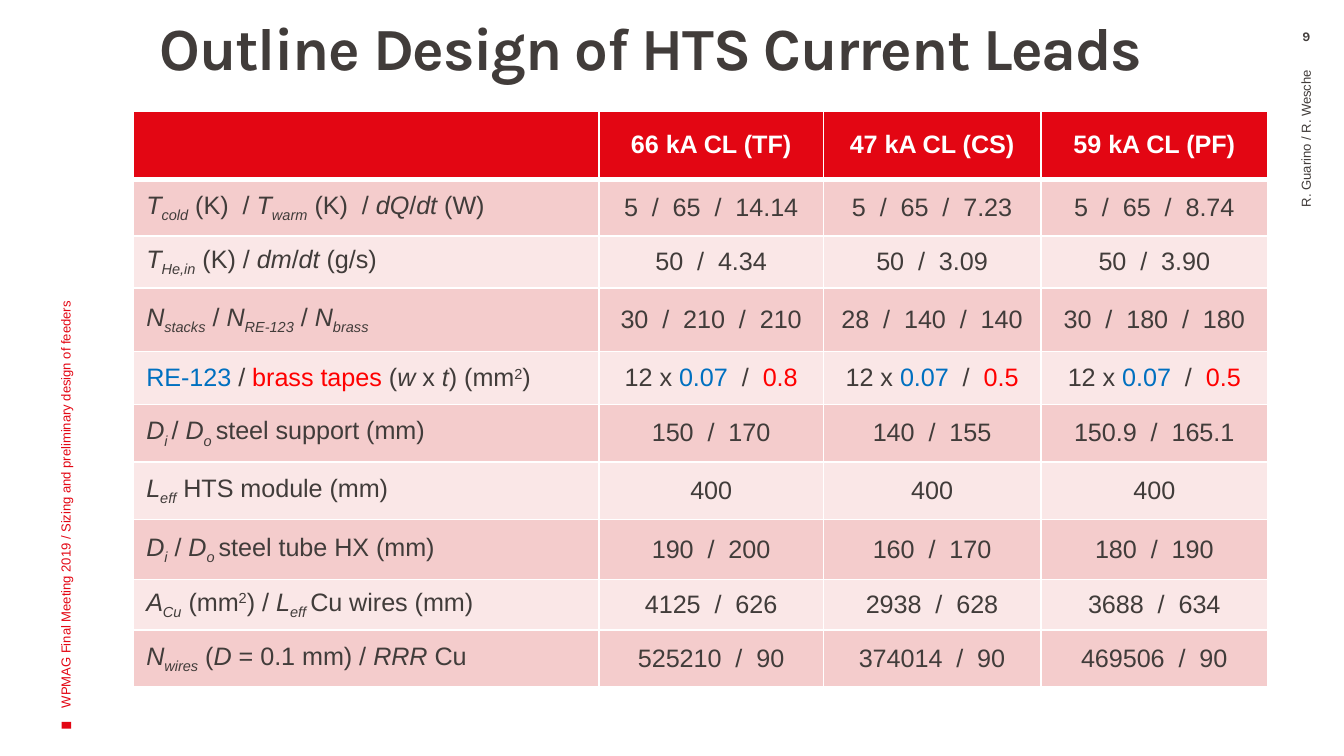
import pptx
import pptx.dml.color
import pptx.enum.shapes
import pptx.enum.text
import pptx.oxml
import pptx.oxml.ns
import pptx.util

Cm, Pt = pptx.util.Cm, pptx.util.Pt
RGB = pptx.dml.color.RGBColor
ALIGN = pptx.enum.text.PP_ALIGN
ANCHOR = pptx.enum.text.MSO_ANCHOR

RED = RGB(0xE3, 0x06, 0x13)
DARK = RGB(0x41, 0x3C, 0x3A)
WHITE = RGB(0xFF, 0xFF, 0xFF)
PINK = RGB(0xF4, 0xCC, 0xCC)
PALE = RGB(0xFA, 0xE7, 0xE7)
BLUE = RGB(0x00, 0x70, 0xC0)
BRIGHT_RED = RGB(0xFF, 0x00, 0x00)

# Content: {i }=italic, {s }=italic subscript, {^ }=superscript, {b }=blue, {r }=red
TITLE = "Outline Design of HTS Current Leads"
PAGE = "9"
FOOTER = "WPMAG Final Meeting 2019 / Sizing and preliminary design of feeders"
AUTHORS = "R. Guarino / R. Wesche "
HEADER = ["", "66 kA CL (TF)", "47 kA CL (CS)", "59 kA CL (PF)"]
ROWS = [  # height in cm, label, values for each lead
    (1.07, "{i T}{s cold} (K)  / {i T}{s warm} (K)  / {i dQ}/{i dt} (W)",
     [("5", "65", "14.14"), ("5", "65", "7.23"), ("5", "65", "8.74")]),
    (0.98, "{i T}{s He,in} (K) / {i dm}/{i dt} (g/s)",
     [("50", "4.34"), ("50", "3.09"), ("50", "3.90")]),
    (1.2, "{i N}{s stacks} / {i N}{s RE-123} / {i N}{s brass}",
     [("30", "210", "210"), ("28", "140", "140"), ("30", "180", "180")]),
    (1.0, "{b RE-123} / {r brass tapes }({i w} x {i t}) (mm{^ 2})",
     [("12 x {b 0.07}", "{r 0.8}"), ("12 x {b 0.07}", "{r 0.5}"),
      ("12 x {b 0.07}", "{r 0.5}")]),
    (1.09, "{i D}{s i }/ {i D}{s o }steel support (mm)",
     [("150", "170"), ("140", "155"), ("150.9", "165.1")]),
    (1.08, "{i L}{s eff} HTS module (mm)", [("400",), ("400",), ("400",)]),
    (1.14, "{i D}{s i} / {i D}{s o }steel tube HX (mm)",
     [("190", "200"), ("160", "170"), ("180", "190")]),
    (0.95, "{i A}{s Cu} (mm{^ 2}) / {i L}{s eff }Cu wires (mm)",
     [("4125", "626"), ("2938", "628"), ("3688", "634")]),
    (1.08, "{i N}{s wires} ({i D} = 0.1 mm) / {i RRR }Cu",
     [("525210", "90"), ("374014", "90"), ("469506", "90")]),
]
COL_WIDTHS = [8.81, 4.24, 4.11, 4.29]
HEADER_HEIGHT = 1.29
COLOURS = {"b": BLUE, "r": BRIGHT_RED}
BASELINES = {"s": "-25000", "^": "30000"}


def styled_pieces(markup):
    """Yield (style letter, text) for each run of the markup."""
    for chunk in markup.split("{"):
        marked, brace, plain = chunk.partition("}")
        if brace:
            yield marked[0], marked[2:]
        else:
            plain = marked
        if plain:
            yield "", plain


def fill_cell(cell, markup, fill, align, colour=DARK, bold=False, top=1, bottom=1):
    tcPr = cell._tc.get_or_add_tcPr()
    for side, width in zip("LRTB", (1, 1, top, bottom)):
        tcPr.append(pptx.oxml.parse_xml(
            f'<a:ln{side} {pptx.oxml.ns.nsdecls("a")} w="{Pt(width)}"><a:solidFill>'
            f'<a:srgbClr val="{WHITE}"/></a:solidFill></a:ln{side}>'))
    cell.fill.solid()
    cell.fill.fore_color.rgb = fill
    cell.vertical_anchor = ANCHOR.MIDDLE
    p = cell.text_frame.paragraphs[0]
    p.alignment = align
    p.font.name, p.font.size = "Arial", Pt(13.5)
    for style, text in styled_pieces(markup):
        r = p.add_run()
        r.text = text
        r.font.bold = bold
        r.font.color.rgb = COLOURS.get(style, colour)
        if style in ("i", "s"):
            r.font.italic = True
        if style in BASELINES:
            r._r.get_or_add_rPr().set("baseline", BASELINES[style])


def add_text(slide, text, box, size, font, colour, bold=False, align=ALIGN.LEFT,
             anchor=ANCHOR.TOP, margins=(0.25, 0.13, 0.25, 0.13), rotation=0):
    sp = slide.shapes.add_textbox(*map(Cm, box))
    sp.rotation = rotation
    tf = sp.text_frame
    tf.word_wrap = True
    tf.vertical_anchor = anchor
    tf.margin_left, tf.margin_top, tf.margin_right, tf.margin_bottom = map(Cm, margins)
    p = tf.paragraphs[0]
    p.alignment = align
    p.font.name, p.font.size, p.font.bold = font, Pt(size), bold
    p.font.color.rgb = colour
    p.add_run().text = text
    return p


prs = pptx.Presentation()
prs.slide_width, prs.slide_height = Cm(25.4), Cm(14.28)
s = prs.slides.add_slide(prs.slide_layouts[6])

# Footer marker
sp = s.shapes.add_shape(pptx.enum.shapes.MSO_SHAPE.RECTANGLE,
                        Cm(1.19), Cm(13.61), Cm(0.13), Cm(0.18))
sp.rotation = 270
sp.shadow.inherit = False
sp.fill.solid()
sp.fill.fore_color.rgb = RED
sp.line.fill.background()

# Page number and title
add_text(s, PAGE, (23.98, 0.53, 1.42, 0.46), 7, "Karla", DARK, bold=True,
         align=ALIGN.CENTER, margins=(0.25, 0, 0.25, 0))
p = add_text(s, TITLE, (2.51, 0.36, 21.46, 1.55), 32, "Karla", DARK, bold=True,
             margins=(0.51, 0, 0.2, 0.13))
p.line_spacing = 0.9
p.runs[0]._r.get_or_add_rPr().set("spc", "-70")

# Table of lead parameters
heights = [HEADER_HEIGHT] + [row[0] for row in ROWS]
table = s.shapes.add_table(len(heights), len(COL_WIDTHS), Cm(2.51), Cm(2.1),
                           Cm(sum(COL_WIDTHS)), Cm(sum(heights))).table
for column, width in zip(table.columns, COL_WIDTHS):
    column.width = Cm(width)
for row, height in zip(table.rows, heights):
    row.height = Cm(height)
for c, text in enumerate(HEADER):
    fill_cell(table.cell(0, c), text, RED, ALIGN.CENTER, WHITE, bold=True, bottom=3)
for n, (_, label, values) in enumerate(ROWS, 1):
    fill = PINK if n % 2 else PALE
    top = 3 if n == 1 else 1
    fill_cell(table.cell(n, 0), label, fill, ALIGN.LEFT, top=top)
    for c, parts in enumerate(values, 1):
        fill_cell(table.cell(n, c), "  /  ".join(parts), fill, ALIGN.CENTER, top=top)

# Vertical side texts
add_text(s, FOOTER, (-3.4, 7.72, 9.27, 2.54), 7, "Arial", RED,
         anchor=ANCHOR.MIDDLE, rotation=270)
add_text(s, AUTHORS, (19.76, 5.21, 9.83, 1.42), 7, "Arial", DARK,
         align=ALIGN.RIGHT, anchor=ANCHOR.MIDDLE, rotation=270)

prs.save("out.pptx")
